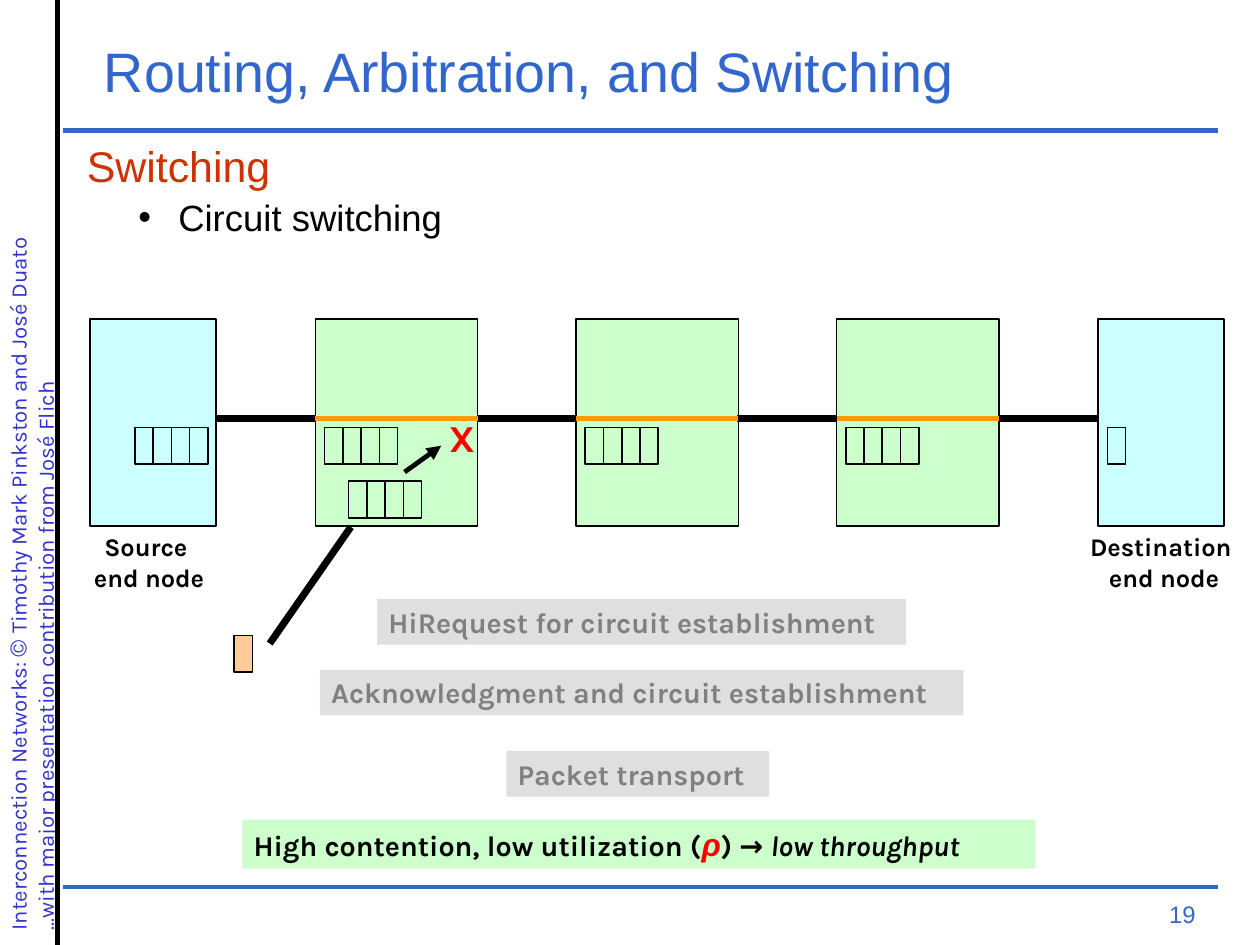
from lxml import etree
from pptx import Presentation
from pptx.dml.color import RGBColor
from pptx.enum.shapes import MSO_CONNECTOR, MSO_SHAPE
from pptx.enum.text import MSO_ANCHOR, MSO_AUTO_SIZE, PP_ALIGN
from pptx.oxml.ns import qn
from pptx.util import Inches, Pt

LEFT, CENTER, RIGHT = PP_ALIGN.LEFT, PP_ALIGN.CENTER, PP_ALIGN.RIGHT
MIDDLE = MSO_ANCHOR.MIDDLE
GROW, FIXED = MSO_AUTO_SIZE.SHAPE_TO_FIT_TEXT, MSO_AUTO_SIZE.NONE
RECTANGLE, STRAIGHT = MSO_SHAPE.RECTANGLE, MSO_CONNECTOR.STRAIGHT

PAGE_WIDTH, PAGE_HEIGHT = Pt(793.75), Pt(595.25)
BLUE, BLACK, RED, GREY = "3366CC", "000000", "FF0000", "808080"
GREEN, CYAN, ORANGE = "CCFFCC", "CCFFFF", "FF9900"
TIGHT, ROOMY = (0.1, 0.05), (0.11, 0.06)
SWITCH_PITCH, CELL_WIDTH, CELL_HEIGHT = 2.28, 0.16, 0.32
NODE_TOP, NODE_HEIGHT, LINK_Y, BUFFER_TOP = 2.79, 1.81, 3.66, 3.74


def color(hex_code):
    """Turn a hex string into a colour."""
    return RGBColor.from_string(hex_code)


class Deck:
    """Holds the current slide and its drawing style."""

    def __init__(self, width, height):
        """Open a deck with one title-only slide."""
        self.deck = Presentation()
        self.deck.slide_width, self.deck.slide_height = width, height
        self.slide = self.deck.slides.add_slide(self.deck.slide_layouts[5])

    def run(self, paragraph, text, size, hex_code, font="Karla", bold=False, italic=False):
        """Append one formatted run."""
        run = paragraph.add_run()
        run.text = text
        run.font.size, run.font.name = Pt(size), font
        run.font.bold, run.font.italic = bold, italic
        run.font.color.rgb = color(hex_code)

    def frame(self, holder, margins, wrap=True, size=GROW):
        """Set margins and wrapping of a text frame."""
        frame = holder.text_frame
        frame.margin_left = frame.margin_right = Inches(margins[0])
        frame.margin_top = frame.margin_bottom = Inches(margins[1])
        frame.auto_size, frame.word_wrap = size, wrap
        return frame

    def title(self, text, *box):
        """Place and format the title."""
        title = self.slide.shapes.title
        title.left, title.top, title.width, title.height = map(Inches, box)
        frame = self.frame(title, ROOMY, size=FIXED)
        frame.vertical_anchor = MIDDLE
        frame.paragraphs[0].alignment = LEFT
        self.run(frame.paragraphs[0], text, 35, BLUE, "Arial")

    def text(self, box, lines, align=CENTER, margins=TIGHT, wrap=False, size=GROW):
        """Add a text box whose lines are lists of runs."""
        holder = self.slide.shapes.add_textbox(*map(Inches, box))
        frame = self.frame(holder, margins, wrap, size)
        for index, line in enumerate(lines):
            paragraph = frame.add_paragraph() if index else frame.paragraphs[0]
            paragraph.alignment = align
            for run in line:
                self.run(paragraph, *run)
        return holder

    def banner(self, box, runs, fill, opacity=100):
        """Add a one-line text box with a filled background."""
        banner = self.text(box, [runs], LEFT, wrap=True)
        banner.fill.solid()
        banner.fill.fore_color.rgb = color(fill)
        if opacity < 100:
            tint = banner.fill._xPr.find(qn("a:solidFill"))[0]
            etree.SubElement(tint, qn("a:alpha"), val=str(opacity * 1000))

    def indent(self, paragraph, margin, hanging, bullet=None):
        """Give a paragraph a hanging indent and an optional bullet."""
        properties = paragraph._p.get_or_add_pPr()
        properties.set("marL", str(Inches(margin)))
        properties.set("indent", str(-Inches(hanging)))
        if bullet:
            etree.SubElement(properties, qn("a:buFont"), typeface="Arial")
            etree.SubElement(properties, qn("a:buChar"), char=bullet)

    def block(self, x, y, width, height, fill=None):
        """Add an outlined rectangle."""
        block = self.slide.shapes.add_shape(RECTANGLE, *map(Inches, (x, y, width, height)))
        block.shadow.inherit = False
        block.line.color.rgb, block.line.width = color(BLACK), Pt(1)
        if fill:
            block.fill.solid()
            block.fill.fore_color.rgb = color(fill)
        else:
            block.fill.background()

    def buffer(self, x, y, cells=4):
        """Add a row of adjoining buffer cells."""
        for cell in range(cells):
            self.block(x + cell * CELL_WIDTH, y, CELL_WIDTH, CELL_HEIGHT)

    def line(self, start, end, hex_code=BLACK, weight=3.0, arrow=False):
        """Add a straight line, with an arrowhead at its end if asked."""
        line = self.slide.shapes.add_connector(STRAIGHT, *map(Inches, (*start, *end)))
        line.line.color.rgb, line.line.width = color(hex_code), Pt(weight)
        if arrow:
            etree.SubElement(line.line._get_or_add_ln(), qn("a:tailEnd"), type="triangle")
        etree.SubElement(line._element.spPr, qn("a:effectLst"))

    def save(self):
        """Write the deck."""
        self.deck.save("out.pptx")


def draw_page(deck):
    """Draw the title, rules, credit, page number and outline."""
    credit = deck.text((-3.88, 3.81, 8.27, 0.61), [
        [("Interconnection Networks: ", 14, "3333CC"), ("© ", 16, "3333CC"),
         ("Timothy Mark Pinkston and José Duato", 14, "3333CC")],
        [("...with major presentation contribution from José Flich", 14, "3333CC")],
    ], LEFT, ROOMY, True)
    credit.rotation = 270
    for rule_y in (1.14, 7.76):
        deck.line((0.55, rule_y), (10.66, rule_y), BLUE)
    deck.line((0.5, 0), (0.5, 8.27))
    deck.text((8.18, 7.81, 2.39, 0.28), [[("19", 15, BLUE, "Arial")]], RIGHT, ROOMY, True, FIXED)
    deck.title("Routing, Arbitration, and Switching", 0.8, 0.34, 9.85, 0.55)
    outline = deck.text((0.76, 1.22, 10.12, 0.87), [
        [("Switching", 27, "CC3300", "Arial")],
        [("Circuit switching", 23, BLACK, "Arial")],
    ], LEFT, (0, 0), True)
    topic, method = outline.text_frame.paragraphs
    deck.indent(topic, 0.23, 0.23)
    deck.indent(method, 0.8, 0.35, "•")
    method.level = 1
    method.space_before = Pt(2.5)


def draw_network(deck):
    """Draw the end nodes, switches, links and buffers."""
    switches = [2.76 + SWITCH_PITCH * hop for hop in range(3)]
    for switch_x in switches:
        deck.block(switch_x, NODE_TOP, 1.42, NODE_HEIGHT, GREEN)
    for node_x in (0.79, 9.61):
        deck.block(node_x, NODE_TOP, 1.1, NODE_HEIGHT, CYAN)
    for hop in range(4):
        link_x = 1.89 + SWITCH_PITCH * hop
        deck.line((link_x, LINK_Y), (link_x + 0.87, LINK_Y), weight=4.5)
    for switch_x in switches:
        deck.line((switch_x, LINK_Y), (switch_x + 1.42, LINK_Y), ORANGE)
        deck.buffer(switch_x + 0.08, BUFFER_TOP)
    deck.buffer(1.18, BUFFER_TOP)
    deck.buffer(9.69, BUFFER_TOP, cells=1)
    for box, name in (((0.69, 4.6, 1.23, 0.64), "Source "),
                      ((9.41, 4.6, 1.55, 0.64), "Destination ")):
        deck.text(box, [[(part, 16, BLACK, "Karla", True)] for part in (name, "end node")])


def draw_contention(deck):
    """Draw the blocked packet arriving at the first switch."""
    deck.line((2.36, 5.63), (3.07, 4.61), weight=4.5)
    deck.buffer(3.05, 4.21)
    deck.line((3.54, 4.13), (3.86, 3.9), arrow=True)
    deck.text((3.83, 3.58, 0.43, 0.5), [[("X", 24, RED, "Karla", True)]])
    deck.block(2.05, 5.56, CELL_WIDTH, CELL_HEIGHT, "FFCC99")


def draw_banners(deck):
    """Draw the three past phases and the conclusion."""
    for x, y, width, phase in (
        (3.3, 5.24, 4.63, "HiRequest for circuit establishment"),
        (2.8, 5.86, 5.63, "Acknowledgment and circuit establishment"),
        (4.43, 6.57, 2.3, "Packet transport"),
    ):
        deck.banner((x, y, width, 0.4), [(phase, 18, GREY, "Karla", True)], "C0C0C0", 50)
    deck.banner((2.12, 7.17, 6.94, 0.43), [
        ("High contention, low utilization (", 18, BLACK, "Karla", True),
        ("ρ", 20, RED, "Arial", True, True),
        (") → ", 18, BLACK, "Karla", True),
        ("low throughput", 18, BLACK, "Karla", True, True),
    ], GREEN)


def main():
    """Build and save the slide."""
    deck = Deck(PAGE_WIDTH, PAGE_HEIGHT)
    for draw in (draw_page, draw_network, draw_contention, draw_banners):
        draw(deck)
    deck.save()


if __name__ == "__main__":
    main()
